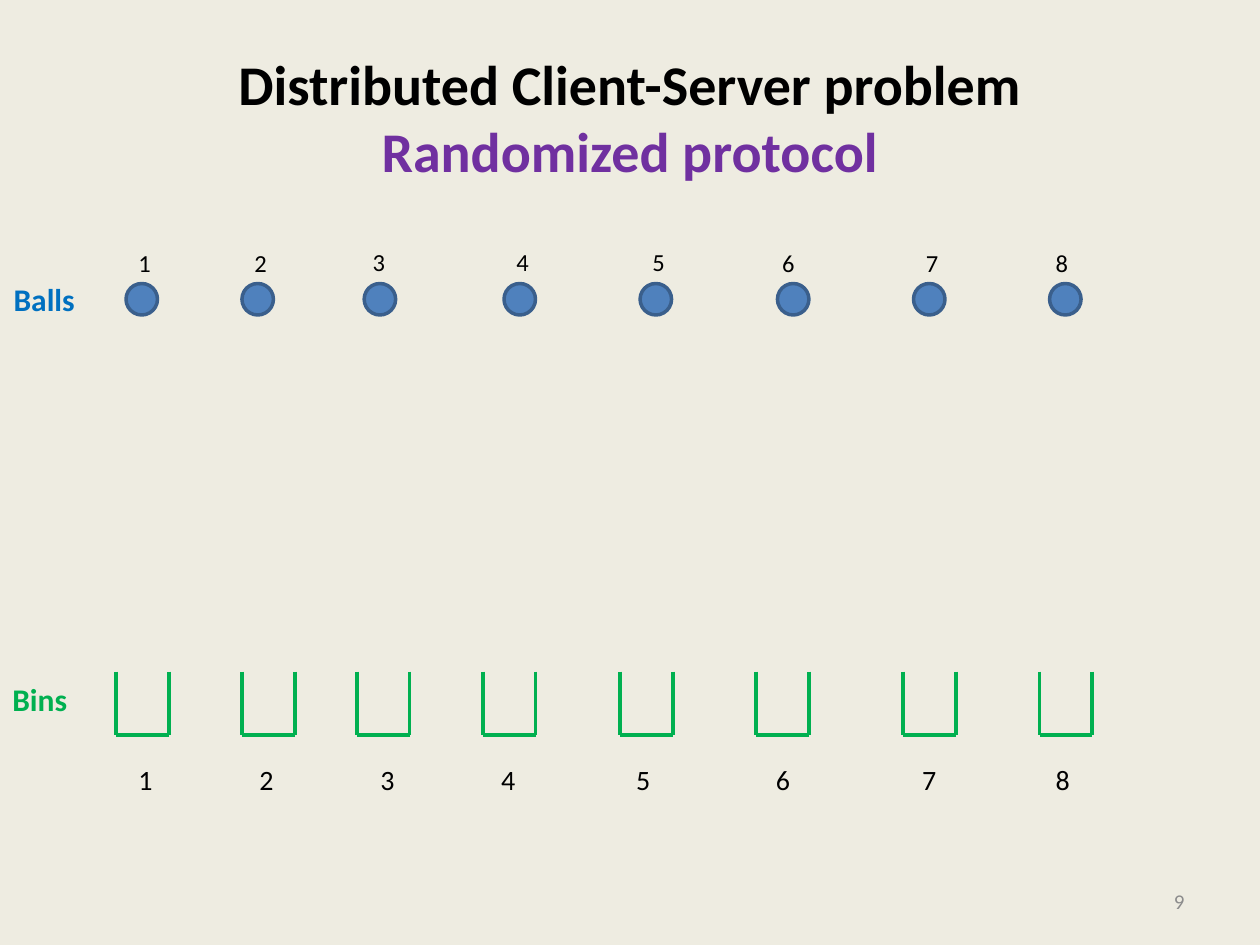
from lxml import etree
from pptx import Presentation
from pptx.dml.color import RGBColor
from pptx.enum import shapes, text
from pptx.oxml.ns import qn
from pptx.util import Inches, Pt

BACKGROUND = RGBColor(0xEE, 0xEC, 0xE1)
BLACK = RGBColor(0, 0, 0)
PURPLE = RGBColor(0x70, 0x30, 0xA0)
GREY = RGBColor(0x8C, 0x8C, 0x8C)
BALL_FILL = RGBColor(0x4F, 0x81, 0xBD)
BALL_LINE = RGBColor(0x3A, 0x5F, 0x8C)
GREEN = RGBColor(0x00, 0xB0, 0x50)
BLUE = RGBColor(0x00, 0x70, 0xC0)

# Left edge of each ball, its number and its bin
BALLS = [1, 1.92, 2.89, 4, 5.08, 6.17, 7.25, 8.33]
BALL_LABELS = [(1, 1.92), (1.92, 1.92), (2.86, 1.91), (4, 1.91),
               (5.08, 1.91), (6.11, 1.92), (7.25, 1.92), (8.28, 1.92)]
BINS = [0.92, 1.92, 2.83, 3.83, 4.92, 6, 7.17, 8.25]
BIN_TABS = [0.96, 1.92, 2.88, 3.95, 5.06, 6.22, 7.28]
BIN_TOP, BIN_BOTTOM, BIN_WIDTH = 5.33, 5.83, 0.42


def add_label(parent, words, x, y, w, h, size, color, bold=False):
    box = parent.add_textbox(Inches(x), Inches(y), Inches(w), Inches(h))
    tf = box.text_frame
    tf.word_wrap = False
    tf.auto_size = text.MSO_AUTO_SIZE.SHAPE_TO_FIT_TEXT
    p = tf.paragraphs[0]
    p.text = words
    p.font.name = "Calibri"
    p.font.size = Pt(size)
    p.font.bold = bold
    p.font.color.rgb = color
    return tf


def add_bin_side(parent, x1, y1, x2, y2):
    side = parent.add_connector(shapes.MSO_CONNECTOR.STRAIGHT, Inches(x1),
                                Inches(y1), Inches(x2), Inches(y2))
    side.line.color.rgb = GREEN
    side.line.width = Pt(2.25)
    etree.SubElement(side._element.spPr, qn("a:effectLst"))


prs = Presentation()
prs.slide_width, prs.slide_height = Inches(10), Inches(7.5)
s = prs.slides.add_slide(prs.slide_layouts[5])
s.background.fill.solid()
s.background.fill.fore_color.rgb = BACKGROUND

# Title
title = s.shapes.title
title.left, title.top = Inches(0.5), Inches(0.3)
title.width, title.height = Inches(9), Inches(1.25)
tf = title.text_frame
tf.auto_size = text.MSO_AUTO_SIZE.NONE
tf.vertical_anchor = text.MSO_ANCHOR.MIDDLE
p = tf.paragraphs[0]
p.alignment = text.PP_ALIGN.CENTER
p.font.name = "Calibri"
p.font.size = Pt(32)
p.font.bold = True
r = p.add_run()
r.text = "Distributed Client-Server problem"
r.font.color.rgb = BLACK
p.add_line_break()
r = p.add_run()
r.text = "Randomized protocol"
r.font.color.rgb = PURPLE

# Slide number
tf = add_label(s.shapes, "9", 7.17, 6.95, 2.33, 0.4, 12, GREY)
tf.word_wrap = True
tf.auto_size = text.MSO_AUTO_SIZE.NONE
tf.vertical_anchor = text.MSO_ANCHOR.MIDDLE
tf.paragraphs[0].alignment = text.PP_ALIGN.RIGHT

# Numbered balls
for number, (x, (label_x, label_y)) in enumerate(zip(BALLS, BALL_LABELS), 1):
    group = s.shapes.add_group_shape().shapes
    ball = group.add_shape(shapes.MSO_SHAPE.OVAL, Inches(x), Inches(2.25),
                           Inches(0.25), Inches(0.25))
    ball.shadow.inherit = False
    ball.fill.solid()
    ball.fill.fore_color.rgb = BALL_FILL
    ball.line.color.rgb = BALL_LINE
    ball.line.width = Pt(2)
    add_label(group, str(number), label_x, label_y, 0.3, 0.34, 14, BLACK)

# Open-topped bins
bins = s.shapes.add_group_shape().shapes
for x in BINS:
    right = x + BIN_WIDTH
    add_bin_side(bins, x, BIN_TOP, x, BIN_BOTTOM)
    add_bin_side(bins, right, BIN_TOP, right, BIN_BOTTOM)
    add_bin_side(bins, x, BIN_BOTTOM, right, BIN_BOTTOM)

# Bin numbers, spaced by tab stops
numbers = "\t".join(str(n) for n in range(1, len(BINS) + 1))
tf = add_label(bins, numbers, 1, 6, 7.67, 0.37, 16, BLACK)
tf.word_wrap = True
pPr = tf.paragraphs[0]._p.get_or_add_pPr()
tabs = etree.Element(qn("a:tabLst"))
for position in BIN_TABS:
    etree.SubElement(tabs, qn("a:tab"), pos=str(Inches(position)), algn="l")
pPr.insert(0, tabs)

# Row names
add_label(s.shapes, "Bins", 0, 5.35, 0.64, 0.4, 18, GREEN, True)
add_label(s.shapes, "Balls", 0.01, 2.17, 0.69, 0.4, 18, BLUE, True)

prs.save("out.pptx")
